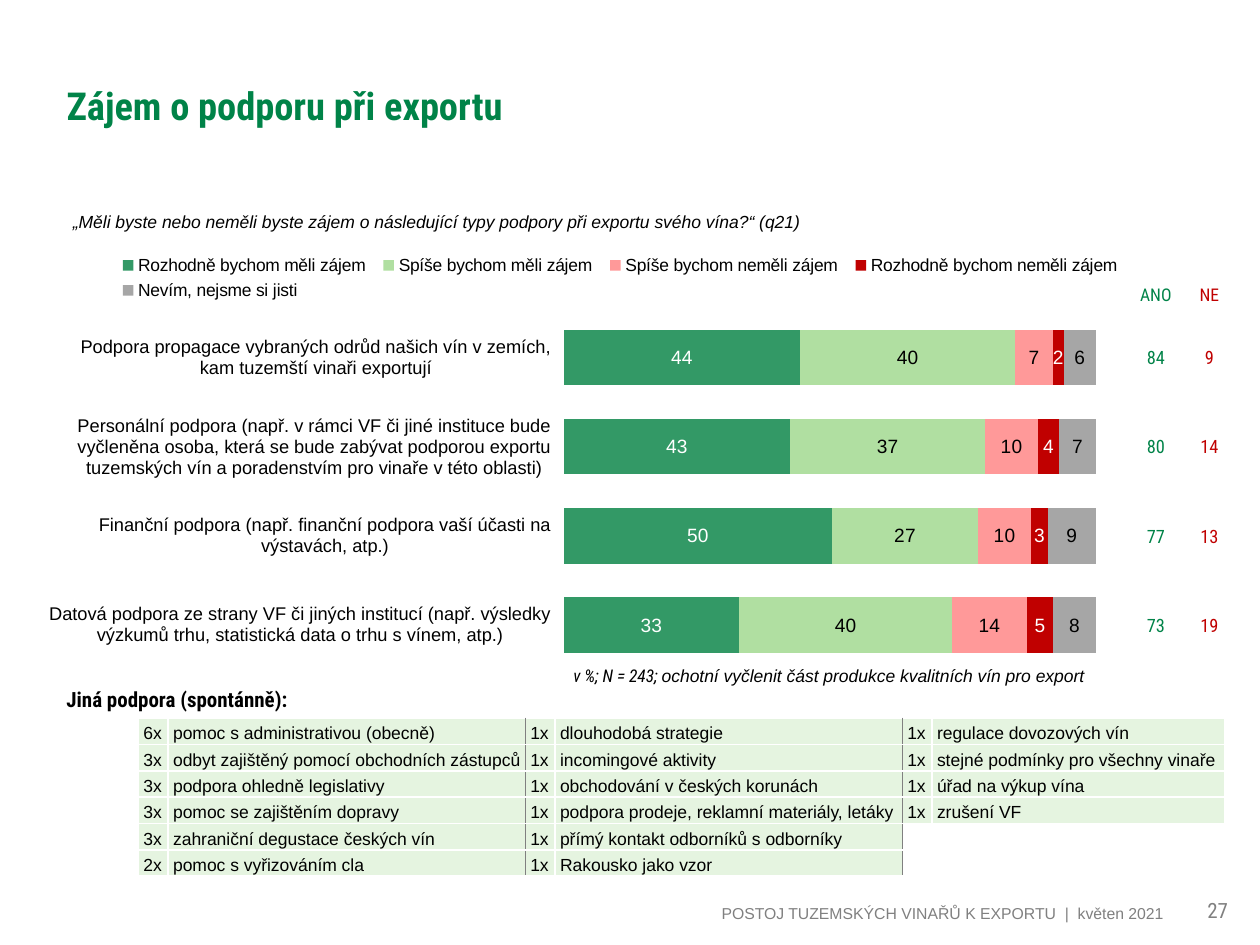
from dataclasses import dataclass
from typing import Any, Optional

from pptx import Presentation
from pptx.chart.data import CategoryChartData
from pptx.dml.color import RGBColor
from pptx.enum.chart import XL_CHART_TYPE, XL_LABEL_POSITION, XL_LEGEND_POSITION, XL_TICK_MARK
from pptx.enum.text import MSO_ANCHOR, PP_ALIGN
from pptx.oxml import parse_xml
from pptx.oxml.ns import nsdecls, qn
from pptx.util import Cm, Pt

BLACK = RGBColor(0x00, 0x00, 0x00)
WHITE = RGBColor(0xFF, 0xFF, 0xFF)
GREY = RGBColor(0x80, 0x80, 0x80)
GREEN = RGBColor(0x00, 0x83, 0x48)
RED = RGBColor(0xC0, 0x00, 0x00)
DARK_GREEN = RGBColor(0x33, 0x99, 0x66)
LIGHT_GREEN = RGBColor(0xB0, 0xDF, 0xA1)
PINK = RGBColor(0xFF, 0x99, 0x99)
SILVER = RGBColor(0xA6, 0xA6, 0xA6)
PALE_GREEN = RGBColor(0xE5, 0xF4, 0xE0)
ARIAL = "Arial"
ROBOTO = "Roboto Condensed"


@dataclass(frozen=True)
class Style:
    name: str
    size: float
    color: RGBColor = BLACK
    bold: bool = False
    italic: bool = False


@dataclass(frozen=True)
class Caption:
    box: tuple[float, float, float, float]
    runs: list[tuple[str, Style]]
    align: PP_ALIGN = PP_ALIGN.LEFT
    anchor: MSO_ANCHOR = MSO_ANCHOR.TOP
    line_spacing: Optional[float] = None


@dataclass(frozen=True)
class Answer:
    label: str
    shares: tuple[int, ...]
    color: RGBColor
    label_color: RGBColor = BLACK
    number_format: str = "#,##0"


CAPTIONS = [
    Caption((1.24, 17.73, 22.46, 0.99),
            [("POSTOJ TUZEMSKÝCH VINAŘŮ K\u00a0EXPORTU  |  květen 2021", Style(ARIAL, 9, GREY))],
            PP_ALIGN.RIGHT, MSO_ANCHOR.BOTTOM),
    Caption((23.7, 17.73, 1.7, 0.99), [("27", Style(ROBOTO, 12, GREY))],
            PP_ALIGN.CENTER, MSO_ANCHOR.BOTTOM),
    Caption((1.22, 4.17, 23.7, 0.64),
            [("„Měli byste nebo neměli byste zájem o následující typy podpory při exportu svého vína?“ (q21)",
              Style(ARIAL, 10, italic=True))], line_spacing=0.9),
    Caption((10.9, 13.28, 11.61, 0.69),
            [("v %; N = 243; ", Style(ROBOTO, 10, italic=True)),
             ("ochotní vyčlenit část produkce kvalitních vín pro export", Style(ARIAL, 10, italic=True))],
            PP_ALIGN.CENTER),
    Caption((1.09, 13.72, 11.61, 1.19), [("Jiná podpora (spontánně):", Style(ROBOTO, 12, bold=True))]),
]

SUPPORT_TYPES = [
    "Podpora propagace vybraných odrůd našich vín v zemích, kam tuzemští vinaři exportují",
    "Personální podpora (např. v rámci VF či jiné instituce bude vyčleněna osoba, která se bude "
    "zabývat podporou exportu tuzemských vín a poradenstvím pro vinaře v této oblasti)",
    "Finanční podpora (např. finanční podpora vaší účasti na výstavách, atp.)",
    "Datová podpora ze strany VF či jiných institucí (např. výsledky výzkumů trhu, "
    "statistická data o trhu s vínem, atp.)",
]
ANSWERS = [
    Answer("Rozhodně bychom měli zájem", (44, 43, 50, 33), DARK_GREEN, WHITE, "0"),
    Answer("Spíše bychom měli zájem", (40, 37, 27, 40), LIGHT_GREEN, number_format="0"),
    Answer("Spíše bychom neměli zájem", (7, 10, 10, 14), PINK),
    Answer("Rozhodně bychom neměli zájem", (2, 4, 3, 5), RED, WHITE),
    Answer("Nevím, nejsme si jisti", (6, 7, 9, 8), SILVER),
]
TOTALS = [("84", "9"), ("80", "14"), ("77", "13"), ("73", "19")]
OTHER_SUPPORT = [
    ("6x", "pomoc s administrativou (obecně)", "1x", "dlouhodobá strategie", "1x", "regulace dovozových vín"),
    ("3x", "odbyt zajištěný pomocí obchodních zástupců", "1x", "incomingové aktivity",
     "1x", "stejné podmínky pro všechny vinaře"),
    ("3x", "podpora ohledně legislativy", "1x", "obchodování v českých korunách", "1x", "úřad na výkup vína"),
    ("3x", "pomoc se zajištěním dopravy", "1x", "podpora prodeje, reklamní materiály, letáky", "1x", "zrušení VF"),
    ("3x", "zahraniční degustace českých vín", "1x", "přímý kontakt odborníků s odborníky", "", ""),
    ("2x", "pomoc s vyřizováním cla", "1x", "Rakousko jako vzor", "", ""),
]


def apply_format(target: Any, values: dict[str, Any]) -> None:
    for attribute, value in values.items():
        setattr(target, attribute, value)


def format_font(font: Any, style: Style) -> None:
    apply_format(font, {"name": style.name, "size": Pt(style.size),
                        "bold": style.bold, "italic": style.italic})
    font.color.rgb = style.color


def add_run(paragraph: Any, text: str, style: Style) -> None:
    run = paragraph.add_run()
    run.text = text
    format_font(run.font, style)


def add_caption(slide: Any, caption: Caption) -> None:
    frame = slide.shapes.add_textbox(*map(Cm, caption.box)).text_frame
    apply_format(frame, {"word_wrap": True, "vertical_anchor": caption.anchor})
    paragraph = frame.paragraphs[0]
    apply_format(paragraph, {"alignment": caption.align, "line_spacing": caption.line_spacing})
    for text, style in caption.runs:
        add_run(paragraph, text, style)


def add_title(slide: Any, text: str) -> None:
    title = slide.shapes.title
    apply_format(title, {"left": Cm(1.09), "top": Cm(0.53), "width": Cm(18.21), "height": Cm(3.18)})
    title.text_frame.vertical_anchor = MSO_ANCHOR.MIDDLE
    paragraph = title.text_frame.paragraphs[0]
    paragraph.alignment = PP_ALIGN.LEFT
    add_run(paragraph, text, Style(ROBOTO, 22, GREEN, bold=True))


def place_manually(parent: Any, index: int, area: tuple[float, ...], target: str = "") -> None:
    for layout in parent.findall(qn("c:layout")):
        parent.remove(layout)
    modes = '<c:xMode val="edge"/><c:yMode val="edge"/>'
    sizes = "".join(f'<c:{key} val="{value}"/>' for key, value in zip("xywh", area))
    parent.insert(index, parse_xml(
        f'<c:layout {nsdecls("c")}><c:manualLayout>{target}{modes}{sizes}</c:manualLayout></c:layout>'))


def add_interest_chart(slide: Any) -> None:
    data = CategoryChartData()
    data.categories = SUPPORT_TYPES
    for answer in ANSWERS:
        data.add_series(answer.label, answer.shares)
    chart = slide.shapes.add_chart(XL_CHART_TYPE.BAR_STACKED_100,
                                   Cm(0.99), Cm(4.95), Cm(22), Cm(9.3), data).chart
    apply_format(chart, {"has_title": False, "has_legend": True})
    format_font(chart.font, Style(ARIAL, 10))
    apply_format(chart.legend, {"position": XL_LEGEND_POSITION.TOP, "include_in_layout": False})
    format_font(chart.legend.font, Style(ARIAL, 10))
    apply_format(chart.value_axis, {"visible": False, "has_major_gridlines": False})
    apply_format(chart.category_axis, {"reverse_order": True, "major_tick_mark": XL_TICK_MARK.OUTSIDE})
    chart.category_axis.format.line.fill.background()
    format_font(chart.category_axis.tick_labels.font, Style(ARIAL, 10.5))
    plot = chart.plots[0]
    apply_format(plot, {"gap_width": 60, "overlap": 100, "vary_by_categories": False})
    for series, answer in zip(plot.series, ANSWERS):
        series.format.fill.solid()
        series.format.fill.fore_color.rgb = answer.color
        labels = series.data_labels
        apply_format(labels, {"show_value": True, "number_format": answer.number_format,
                              "number_format_is_linked": False, "position": XL_LABEL_POSITION.CENTER})
        format_font(labels.font, Style(ARIAL, 11, answer.label_color))
    place_manually(plot._element.getparent(), 0, (0.468, 0.146, 0.491, 0.773),
                   '<c:layoutTarget val="inner"/>')
    place_manually(chart.legend._element, 1, (0.05, 0.01, 0.94, 0.12))


def add_plain_table(slide: Any, left: float, top: float, widths: list[float],
                    row_height: float, row_count: int) -> Any:
    table = slide.shapes.add_table(row_count, len(widths), Cm(left), Cm(top),
                                   Cm(sum(widths)), Cm(row_height * row_count)).table
    apply_format(table, {"first_row": False, "horz_banding": False})
    for column, width in zip(table.columns, widths):
        column.width = Cm(width)
    for row in table.rows:
        row.height = Cm(row_height)
    return table


def fill_cell(cell: Any, text: str, style: Style, margins: tuple[float, float],
              align: PP_ALIGN = PP_ALIGN.LEFT) -> None:
    side, top = map(Cm, margins)
    apply_format(cell, {"margin_left": side, "margin_right": side, "margin_top": top,
                        "margin_bottom": 0, "vertical_anchor": MSO_ANCHOR.MIDDLE})
    paragraph = cell.text_frame.paragraphs[0]
    paragraph.alignment = align
    if text:
        add_run(paragraph, text, style)
    else:
        paragraph._p.append(parse_xml(f'<a:endParaRPr {nsdecls("a")} sz="{int(style.size * 100)}"/>'))


def add_totals(slide: Any, top: float, row_height: float, rows: list[tuple[str, str]], size: float) -> None:
    table = add_plain_table(slide, 22.76, top, [1.08, 1.08], row_height, len(rows))
    for r, row in enumerate(rows):
        for c, (text, color) in enumerate(zip(row, (GREEN, RED))):
            cell = table.cell(r, c)
            fill_cell(cell, text, Style(ROBOTO, size, color), (0.03, 0), PP_ALIGN.CENTER)
            cell.fill.background()


def add_other_support(slide: Any) -> None:
    table = add_plain_table(slide, 2.79, 14.48, [0.6, 7.2, 0.6, 7, 0.6, 5.9], 0.53, len(OTHER_SUPPORT))
    for r, row in enumerate(OTHER_SUPPORT):
        for c, text in enumerate(row):
            cell = table.cell(r, c)
            fill_cell(cell, text, Style(ARIAL, 10), (0.1, 0.1))
            divider = {1: "R", 3: "R", 2: "L", 4: "L"}.get(c)
            for side in "LRTB":
                color = GREY if side == divider else WHITE
                cell._tc.get_or_add_tcPr().append(parse_xml(
                    f'<a:ln{side} {nsdecls("a")} w="12700"><a:solidFill>'
                    f'<a:srgbClr val="{color}"/></a:solidFill></a:ln{side}>'))
            cell.fill.solid()
            cell.fill.fore_color.rgb = PALE_GREEN if text else WHITE


def main() -> None:
    presentation = Presentation()
    apply_format(presentation, {"slide_width": Cm(25.4), "slide_height": Cm(19.05)})
    slide = presentation.slides.add_slide(presentation.slide_layouts[5])
    add_title(slide, "Zájem o podporu při exportu")
    add_interest_chart(slide)
    for caption in CAPTIONS:
        add_caption(slide, caption)
    add_totals(slide, 6.32, 1.8, TOTALS, 10.5)
    add_totals(slide, 5.59, 0.73, [("ANO", "NE")], 10)
    add_other_support(slide)
    presentation.save("out.pptx")


if __name__ == "__main__":
    main()
